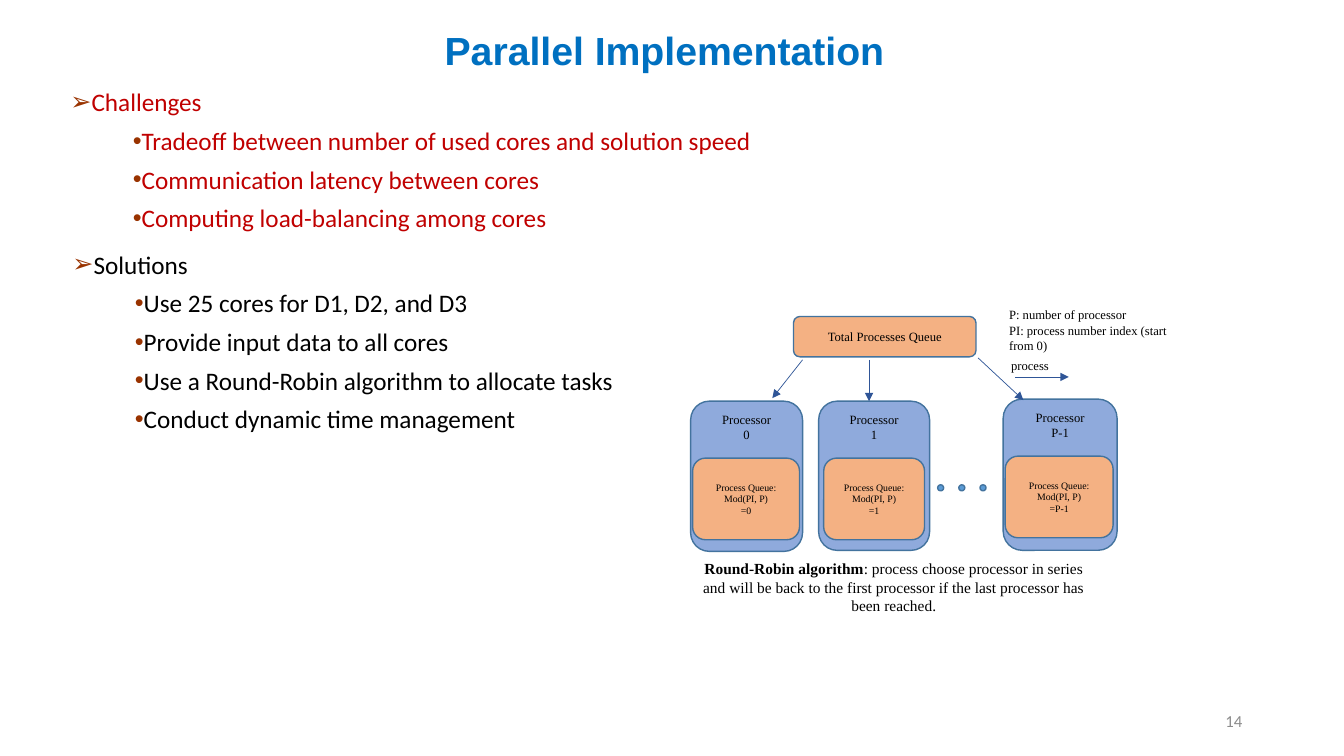
from lxml import etree
from pptx import Presentation
from pptx.dml.color import RGBColor
from pptx.enum.shapes import MSO_CONNECTOR, MSO_SHAPE
from pptx.enum.text import MSO_ANCHOR, PP_ALIGN
from pptx.oxml.ns import qn
from pptx.util import Inches, Pt

ROUNDED, OVAL = MSO_SHAPE.ROUNDED_RECTANGLE, MSO_SHAPE.OVAL
STRAIGHT = MSO_CONNECTOR.STRAIGHT
LEFT, CENTER, RIGHT = PP_ALIGN.LEFT, PP_ALIGN.CENTER, PP_ALIGN.RIGHT
TOP, MIDDLE = MSO_ANCHOR.TOP, MSO_ANCHOR.MIDDLE

CELL = Inches(0.1)
SERIF = "Times New Roman"
COLORS = {
    "title": "0070C0", "challenge": "C00000", "text": "000000",
    "bullet": "993300", "processor": "8FAADC", "queue": "F4B183",
    "dot": "5B9BD5", "outline": "43739E", "arrow": "2F5597", "number": "8C8C8C",
}


def rgb(name):
    """Return the named palette colour."""
    return RGBColor.from_string(COLORS[name])


def place(box, left, top, width, height):
    """Turn grid cells relative to a box into slide lengths."""
    return [round(n * CELL) for n in (box[0] + left, box[1] + top, width, height)]


def write(frame, text, size=9, font=SERIF, color="text", bold=False,
          align=LEFT, anchor=TOP, lead=""):
    """Fill a frame with one paragraph per line, after an optional bold lead."""
    frame.word_wrap = True
    frame.vertical_anchor = anchor
    for index, line in enumerate(text.split("\n")):
        paragraph = frame.add_paragraph() if index else frame.paragraphs[0]
        paragraph.alignment = align
        parts = [(lead, True)] if lead and not index else []
        for words, heavy in parts + [(line, bold)]:
            run = paragraph.add_run()
            run.text = words
            run.font.size, run.font.name, run.font.bold = Pt(size), font, heavy
            run.font.color.rgb = rgb(color)
    return frame


def add_label(slide, box, area, text, **style):
    """Add a text box on the grid of a region."""
    label = slide.shapes.add_textbox(*place(box, *area))
    return write(label.text_frame, text, **style)


def add_block(slide, box, area, fill, text="", kind=ROUNDED, corner=None, **style):
    """Add an outlined shape on the grid of a region."""
    block = slide.shapes.add_shape(kind, *place(box, *area))
    block.shadow.inherit = False
    block.fill.solid()
    block.fill.fore_color.rgb = rgb(fill)
    block.line.color.rgb = rgb("outline")
    block.line.width = Pt(1)
    if corner:
        block.adjustments[0] = corner
    if text:
        write(block.text_frame, text, align=CENTER, **style)


def add_arrow(slide, box, start, end):
    """Add a thin arrow between two grid points of a region."""
    points = place(box, *start, 0, 0)[:2] + place(box, *end, 0, 0)[:2]
    arrow = slide.shapes.add_connector(STRAIGHT, *points)
    arrow.line.color.rgb = rgb("arrow")
    arrow.line.width = Pt(0.5)
    etree.SubElement(arrow.line._get_or_add_ln(), qn("a:tailEnd"), type="triangle")
    etree.SubElement(arrow._element.spPr, qn("a:effectLst"))


def set_bullet(paragraph, symbol, indent):
    """Give a paragraph a coloured bullet and an indent in grid cells."""
    props = paragraph._p.get_or_add_pPr()
    offset = str(round(indent * CELL))
    props.set("marL", offset)
    props.set("indent", offset)
    tint = etree.SubElement(props, qn("a:buClr"))
    etree.SubElement(tint, qn("a:srgbClr"), val=COLORS["bullet"])
    etree.SubElement(props, qn("a:buFont"), typeface="Arial")
    etree.SubElement(props, qn("a:buChar"), char=symbol)


def add_title(slide, box):
    """Move and format the title placeholder."""
    title = slide.shapes.title
    title.left, title.top, title.width, title.height = place((0, 0), *box)
    frame = write(title.text_frame, "Parallel Implementation", size=28,
                  font="Arial", color="title", bold=True, anchor=MIDDLE)
    frame.paragraphs[0].line_spacing = 0.9


def add_topic(slide, box, heading, points, color):
    """Add a heading with its bulleted points."""
    frame = add_label(slide, box, (0, 0, *box[2:]), "\n".join([heading, *points]),
                      size=18, font="Calibri", color=color)
    for index, paragraph in enumerate(frame.paragraphs):
        paragraph.space_before = Pt(6 if index else 0)
        set_bullet(paragraph, "•" if index else "➢", 3.1 if index else 0)


def add_processor(slide, box, index, queue_left, queue_width):
    """Add one processor with its process queue."""
    add_block(slide, box, (0, 0, *box[2:]), "processor",
              f"Processor\n{index}", anchor=TOP)
    add_block(slide, box, (queue_left, 5.65, queue_width, 8.1), "queue",
              f"Process Queue:\nMod(PI, P)\n={index}", size=7,
              anchor=MIDDLE, corner=0.157)


def add_diagram(slide, box):
    """Draw the Round-Robin allocation diagram."""
    left, top = box
    add_block(slide, box, (10.2, 1.4, 18.1, 4), "queue",
              "Total Processes Queue", anchor=MIDDLE, corner=0.157)
    processors = [
        ("0", 0, 9.8, 11.1, 14.9, 0.2, 10.6),
        ("1", 12.7, 9.8, 11, 14.8, 0.5, 10),
        ("P-1", 31, 9.6, 11.3, 15, 0.2, 10.7),
    ]
    for index, column, row, width, height, queue_left, queue_width in processors:
        add_processor(slide, (left + column, top + row, width, height),
                      index, queue_left, queue_width)
    for step in range(3):
        add_block(slide, box, (24.5 + 2.1 * step, 18.1, 0.6, 0.6), "dot", kind=OVAL)
    add_label(slide, box, (30.6, 0, 19.1, 6.1),
              "P: number of processor\nPI: process number index (start from 0)")
    add_label(slide, box, (30.8, 5, 8.7, 2.9), "process")
    arrows = [
        ((11.1, 5.7), (8.1, 9.5)),
        ((17.7, 5.7), (17.7, 9.8)),
        ((28.5, 5.5), (33, 9.7)),
        ((32.2, 7.4), (37.5, 7.4)),
    ]
    for start, end in arrows:
        add_arrow(slide, box, start, end)
    add_label(slide, box, (0, 25, 40.3, 7.3),
              ": process choose processor in series and will be back to the first "
              "processor if the last processor has been reached.",
              size=11, align=CENTER, lead="Round-Robin algorithm")


def main():
    """Build and save the slide."""
    deck = Presentation()
    deck.slide_width, deck.slide_height = Inches(13.33), Inches(7.5)
    slide = deck.slides.add_slide(deck.slide_layouts[5])
    add_title(slide, (43.1, 2.3, 48.8, 5.9))
    add_topic(slide, (6, 8.1, 101.5, 19.5), "Challenges", [
        "Tradeoff between number of used cores and solution speed",
        "Communication latency between cores",
        "Computing load-balancing among cores",
    ], "challenge")
    add_topic(slide, (6.2, 24.2, 68.2, 19.5), "Solutions", [
        "Use 25 cores for D1, D2, and D3",
        "Provide input data to all cores",
        "Use a Round-Robin algorithm to allocate tasks",
        "Conduct dynamic time management",
    ], "text")
    add_diagram(slide, (68.5, 30))
    add_label(slide, (94.2, 69.5), (0, 0, 30, 4), "14", size=12, font="Calibri",
              color="number", align=RIGHT, anchor=MIDDLE)
    deck.save("out.pptx")


if __name__ == "__main__":
    main()
